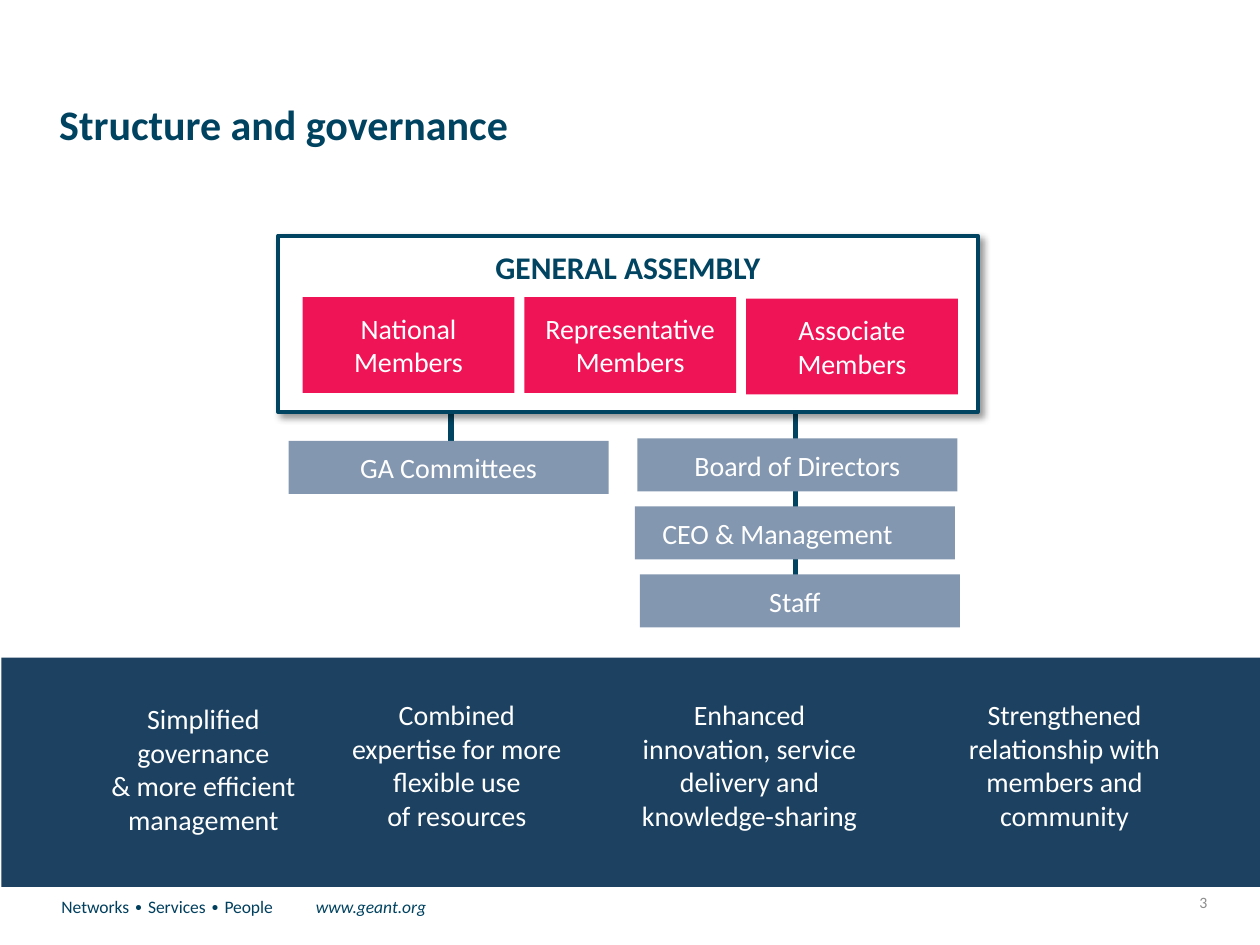
from lxml import etree
from pptx import Presentation
from pptx.dml.color import RGBColor
from pptx.enum.shapes import MSO_CONNECTOR, MSO_SHAPE
from pptx.enum.text import MSO_ANCHOR, PP_ALIGN
from pptx.oxml import parse_xml
from pptx.oxml.ns import qn
from pptx.util import Cm, Pt

RECT = MSO_SHAPE.RECTANGLE
LINE = MSO_CONNECTOR.STRAIGHT
TOP, MID = MSO_ANCHOR.TOP, MSO_ANCHOR.MIDDLE
LEFT, MIDDLE, RIGHT = PP_ALIGN.LEFT, PP_ALIGN.CENTER, PP_ALIGN.RIGHT

WHITE = RGBColor(0xFF, 0xFF, 0xFF)
NAVY = RGBColor(0x01, 0x44, 0x61)
TITLE = RGBColor(0x00, 0x43, 0x61)
FOOT = RGBColor(0x00, 0x3F, 0x5E)
PINK = RGBColor(0xEF, 0x14, 0x56)
SLATE = RGBColor(0x84, 0x97, 0xB0)
BAND = RGBColor(0x1C, 0x41, 0x61)
GREY = RGBColor(0x8C, 0x8C, 0x8C)
FONT = "Calibri"

HEAD = "Structure and governance"
LINKS = [(9.09, 8.26, 9.83, 3.25), (16.03, 8.28, 12.42, 3)]
MEMBERS = [
    ("National\nMembers", 5.99),
    ("Representative\nMembers", 5.99),
    ("Associate\nMembers", 6.02),
]
UNITS = [
    ("GA Committees", 5.82, 8.89, 0.25),
    ("Board of Directors", 12.85, 8.84, 0.25),
    ("CEO & Management", 12.8, 10.21, 0.95),
    ("Staff", 12.9, 11.58, 0.45),
]
GOALS = [
    ("Simplified governance\v& more efficient\vmanagement", 1.6, 14.02, 5.33),
    ("Combined\vexpertise for more\vflexible use\vof resources", 6.63, 13.94, 5.16),
    ("Enhanced\vinnovation, service\vdelivery and\vknowledge-sharing", 12.34, 13.94, 5.54),
    ("Strengthened\vrelationship with members and community", 18.54, 13.94, 5.84),
]
GOALS[0] = (GOALS[0][0], 1.5, 14.02, 5.2)
SHADOW = (
    '<a:effectLst xmlns:a="http://schemas.openxmlformats.org/drawingml/2006/main">'
    '<a:outerShdw blurRad="50800" dist="38100" dir="2700000" algn="tl" rotWithShape="0">'
    '<a:srgbClr val="000000"><a:alpha val="40000"/></a:srgbClr>'
    "</a:outerShdw></a:effectLst>"
)


def style(run, size, color, bold=False, italic=False):
    font = run.font
    font.name, font.size = FONT, Pt(size)
    font.bold, font.italic = bold, italic
    font.color.rgb = color


def write(shape, text, size, color, align=MIDDLE, anchor=MID, bold=False):
    frame = shape.text_frame
    frame.word_wrap = True
    frame.vertical_anchor = anchor
    frame.text = text
    for para in frame.paragraphs:
        para.alignment = align
        for run in para.runs:
            style(run, size, color, bold)
    return frame


def block(slide, x, y, w, h, fill):
    shape = slide.shapes.add_shape(RECT, Cm(x), Cm(y), Cm(w), Cm(h))
    shape.shadow.inherit = False
    shape.fill.solid()
    shape.fill.fore_color.rgb = fill
    shape.line.fill.background()
    return shape


def label(slide, x, y, w, h, *args, **opts):
    box = slide.shapes.add_textbox(Cm(x), Cm(y), Cm(w), Cm(h))
    return write(box, *args, **opts)


def link(slide, x, top, end, width):
    line = slide.shapes.add_connector(LINE, Cm(x), Cm(top), Cm(x), Cm(end))
    line.line.color.rgb = NAVY
    line.line.width = Pt(width)
    etree.SubElement(line._element.spPr, qn("a:effectLst"))


def title(slide):
    head = slide.shapes.title
    head.left, head.top = Cm(0.94), Cm(0.2)
    head.width, head.height = Cm(20.02), Cm(3.78)
    frame = write(head, HEAD, 24, TITLE, LEFT, bold=True)
    frame.margin_top = Cm(1.05)
    frame.paragraphs[0].line_spacing = 0.9


def chart(slide):
    for spot in LINKS:
        link(slide, *spot)
    hall = block(slide, 5.61, 4.75, 14.1, 3.56, WHITE)
    hall.line.color.rgb = NAVY
    hall.line.width = Pt(2.25)
    props = hall._element.spPr
    props.replace(props.find(qn("a:effectLst")), parse_xml(SHADOW))
    frame = write(hall, "GENERAL ASSEMBLY", 18, NAVY, anchor=TOP, bold=True)
    frame.margin_top = Cm(0.25)
    for i, (name, y) in enumerate(MEMBERS):
        card = block(slide, 6.1 + i * 4.47, y, 4.27, 1.93, PINK)
        write(card, name, 16, WHITE)
    for name, x, y, inset in UNITS:
        unit = block(slide, x, y, 6.45, 1.07, SLATE)
        write(unit, name, 16, WHITE).margin_right = Cm(inset)


def footer(slide):
    frame = label(slide, 0.99, 17.93, 8.66, 1.12, "", 10, FOOT, LEFT, TOP)
    para = frame.paragraphs[0]
    tabs = etree.SubElement(para._p.get_or_add_pPr(), qn("a:tabLst"))
    etree.SubElement(tabs, qn("a:tab"), pos=str(Cm(5.13)), algn="l")
    for text, color, italic in [
        ("Networks ∙ Services ∙ People\t", FOOT, False),
        ("www.geant.org", TITLE, True),
    ]:
        run = para.add_run()
        run.text = text
        style(run, 10, color, italic=italic)
    label(slide, 23.04, 17.81, 1.55, 0.76, "3", 9, GREY, RIGHT)


def main():
    deck = Presentation()
    deck.slide_width, deck.slide_height = Cm(25.4), Cm(19.05)
    slide = deck.slides.add_slide(deck.slide_layouts[5])
    title(slide)
    chart(slide)
    block(slide, 0.03, 13.26, 25.37, 4.62, BAND)
    for text, x, y, w in GOALS:
        label(slide, x, y, w, 3, text, 16, WHITE, anchor=TOP)
    footer(slide)
    deck.save("out.pptx")


if __name__ == "__main__":
    main()
